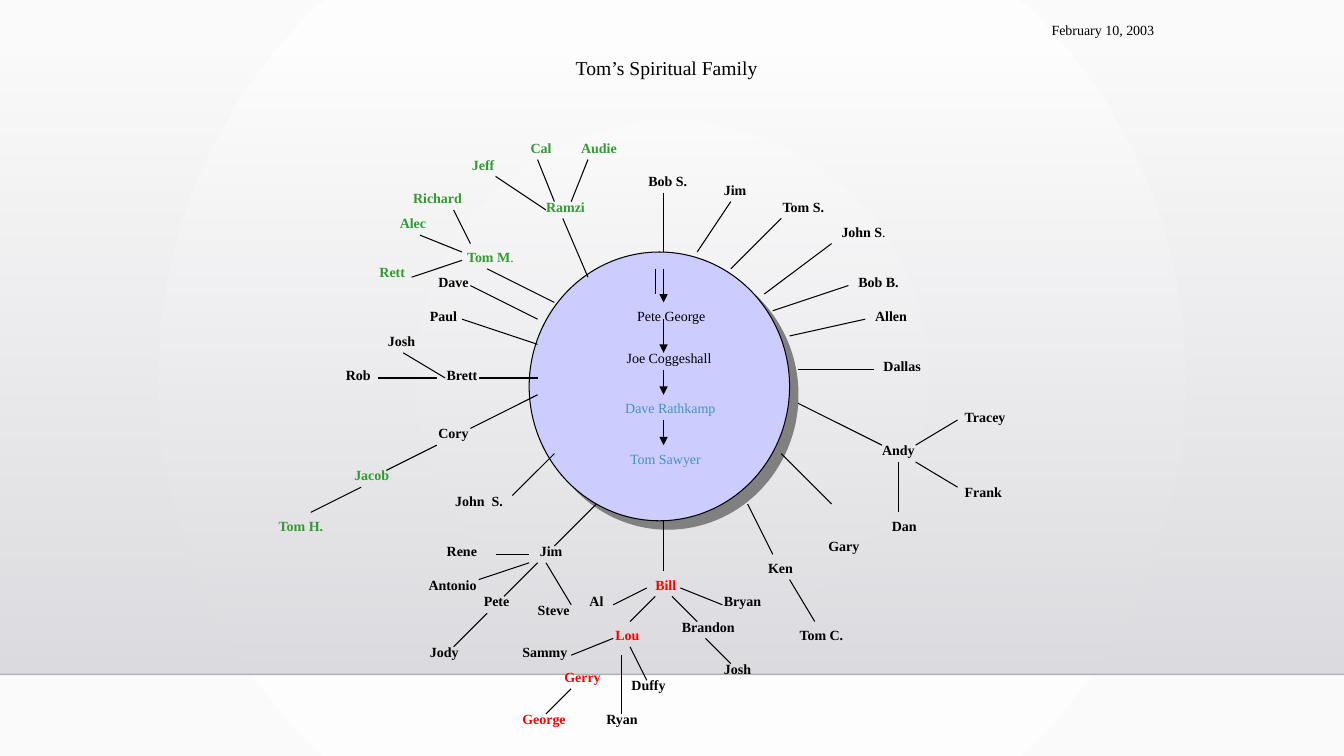
from lxml import etree
from pptx import Presentation
from pptx.dml.color import RGBColor
from pptx.enum import shapes, text
from pptx.oxml.ns import qn
from pptx.util import Pt

STEP = 6  # points per grid unit for the connecting lines
BLACK, GREEN, RED, BLUE = "000000", "339933", "FF0000", "4294B6"

# Ends of lines as x1, y1, x2, y2 in grid units
SPOKES = [
    (79, 30, 79, 23), (83, 30, 87, 24), (87, 32, 93, 26), (91, 35, 99, 29),
    (92, 37, 101, 34), (94, 40, 103, 38), (95, 44, 104, 44), (95, 48, 105, 53),
    (99, 60, 93, 54), (92, 66, 89, 60), (79, 68, 79, 62), (66, 65, 71, 60),
    (61, 59, 66, 54), (56, 51, 64, 47), (64, 45, 57, 45), (64, 41, 55, 38),
    (64, 38, 56, 34), (66, 36, 58, 32), (70, 33, 67, 26), (78, 32, 78, 35),
]
BRANCHES = [
    (68, 24, 70, 19), (66, 24, 64, 19), (65, 25, 59, 21), (56, 29, 54, 25),
    (55, 30, 50, 28), (49, 33, 55, 31), (53, 45, 48, 42), (52, 45, 45, 45),
    (46, 56, 52, 53), (37, 61, 43, 58), (59, 66, 63, 66), (57, 69, 63, 67),
    (60, 71, 64, 67), (68, 72, 65, 67), (54, 77, 58, 73), (73, 72, 77, 70),
    (75, 74, 78, 71), (83, 74, 80, 71), (86, 72, 81, 70), (87, 79, 84, 76),
    (68, 78, 73, 76), (65, 85, 68, 82), (74, 85, 74, 78), (77, 81, 75, 77),
    (94, 69, 97, 74), (109, 53, 114, 50), (109, 55, 114, 58), (107, 55, 107, 61),
]
ARROW_SPANS = [(32, 36), (38, 42), (44, 47), (50, 53)]

# Text, left, top and width in points
LINEAGE = [
    ("Pete George", 448, 216, BLACK), ("Joe Coggeshall", 440.5, 246, BLACK),
    ("Dave Rathkamp", 439.5, 282, BLUE), ("Tom Sawyer", 443, 318, BLUE),
]
FAMILY = {
    BLACK: [
        ("Bob S.", 456, 120, 48), ("Jim", 510, 126, 36), ("Tom S.", 552, 138, 48),
        ("John S.", 594, 156, 48), ("Bob B.", 606, 192, 48), ("Allen", 618, 216, 42),
        ("Dallas", 624, 252, 48), ("Andy", 623, 312, 48), ("Tracey", 682, 288, 60),
        ("Frank", 682, 342, 60), ("Dan", 630, 366, 42), ("Gary", 584.6, 380.2, 42),
        ("Ken", 541.5, 396, 48), ("Tom C.", 564, 444, 54), ("Bryan", 510, 420, 42),
        ("Brandon", 480, 438, 54), ("Josh", 510, 468, 60), ("Al", 414, 420, 30),
        ("Duffy", 444, 480, 42), ("Ryan", 426, 504, 42), ("Sammy", 366, 456, 48),
        ("Jim", 378.5, 384, 54), ("Rene", 312, 384, 48), ("Antonio", 299, 408, 54),
        ("Pete", 338.5, 420, 36), ("Steve", 377, 426, 42), ("Jody", 300, 456, 36),
        ("John  S.", 318, 348, 60), ("Cory", 306, 300, 42), ("Brett", 312, 258, 42),
        ("Josh", 270, 234, 36), ("Rob", 240, 258, 36), ("Paul", 300, 216, 36),
        ("Dave", 306, 192, 42),
    ],
    GREEN: [
        ("Tom M.", 326.5, 174, 60), ("Rett", 264, 185, 36), ("Alec", 278.5, 150, 36),
        ("Richard", 288, 132, 54), ("Ramzi", 383, 138, 60), ("Jeff", 330, 108, 36),
        ("Cal", 372, 96, 30), ("Audie", 408, 96, 42), ("Jacob", 246, 330, 42),
        ("Tom H.", 192, 366, 54),
    ],
    RED: [
        ("Bill", 461, 408, 36), ("Lou", 432.5, 444, 48), ("Gerry", 396, 474, 42),
        ("George", 366, 504, 54),
    ],
}
PLAIN_STOP = {("John S.", 594), ("Tom M.", 326.5)}  # final full stop is not bold


def rgb(value):
    return RGBColor.from_string(value)


def add_xml(parent, tag, **attributes):
    return etree.SubElement(parent, qn(tag), attributes)


class FamilySheet:
    font = "Times New Roman"

    def __init__(self, deck):
        self.page = deck.slides.add_slide(deck.slide_layouts[5])

    def gradient(self, fill, start, end):
        fill.gradient()
        for stop, value in zip(fill.gradient_stops, (start, end)):
            stop.color.rgb = rgb(value)

    def backdrop(self):
        fill = self.page.background.fill
        self.gradient(fill, "FFFFFF", "FAFAFA")
        grad = self.page.element.find(".//" + qn("a:gradFill"))
        grad.remove(grad.find(qn("a:lin")))
        circle = add_xml(grad, "a:path", path="circle")
        add_xml(circle, "a:fillToRect", l="50000", t="50000", r="50000", b="50000")

    def band(self, left, top, width, height):
        """Draw a rectangle that fades in from clear to grey."""
        box = self.shape("RECTANGLE", left, top, width, height)
        self.gradient(box.fill, "DCDCE0", "DEDEE2")
        box.fill.gradient_angle = 270
        box.line.fill.background()
        add_xml(box._element.find(".//" + qn("a:srgbClr")), "a:alpha", val="0")

    def shape(self, kind, left, top, width, height):
        box = self.page.shapes.add_shape(
            shapes.MSO_SHAPE[kind], Pt(left), Pt(top), Pt(width), Pt(height))
        box.shadow.inherit = False
        return box

    def hub(self, left, top, width, height):
        disc = self.shape("OVAL", left, top, width, height)
        disc.fill.solid()
        disc.fill.fore_color.rgb = rgb("CCCCFF")
        disc.line.color.rgb = rgb(BLACK)
        disc.line.width = Pt(0.75)
        effects = disc._element.spPr.find(qn("a:effectLst"))
        shadow = add_xml(effects, "a:outerShdw", dist=str(Pt(8.5)), dir="2700000",
                         algn="ctr", rotWithShape="0")
        add_xml(shadow, "a:srgbClr", val="808080")

    def line(self, x1, y1, x2, y2, color=BLACK, weight=0.75, arrow=False, alpha=None):
        link = self.page.shapes.add_connector(
            shapes.MSO_CONNECTOR.STRAIGHT, Pt(x1), Pt(y1), Pt(x2), Pt(y2))
        link.line.color.rgb = rgb(color)
        link.line.width = Pt(weight)
        if alpha:
            add_xml(link._element.find(".//" + qn("a:srgbClr")), "a:alpha", val=alpha)
        if arrow:
            add_xml(link._element.spPr.find(qn("a:ln")), "a:tailEnd", type="triangle")
        add_xml(link._element.spPr, "a:effectLst")

    def fill_text(self, box, parts, size, color):
        """Fill a box with one paragraph of (text, bold) parts."""
        frame = box.text_frame
        settings = {"word_wrap": True, "auto_size": text.MSO_AUTO_SIZE.NONE,
                    "vertical_anchor": text.MSO_ANCHOR.TOP}
        for key, value in settings.items():
            setattr(frame, key, value)
        para = frame.paragraphs[0]
        para.alignment = text.PP_ALIGN.LEFT
        for words, bold in parts:
            span = para.add_run()
            span.text = words
            for key, value in {"name": self.font, "size": Pt(size), "bold": bold}.items():
                setattr(span.font, key, value)
            span.font.color.rgb = rgb(color)

    def label(self, parts, left, top, width, color=BLACK):
        box = self.page.shapes.add_textbox(Pt(left), Pt(top), Pt(width), Pt(19.2))
        self.fill_text(box, parts, 10, color)

    def title(self, words, left, top, width, height):
        box = self.page.shapes.title
        place = {"left": left, "top": top, "width": width, "height": height}
        for key, value in place.items():
            setattr(box, key, Pt(value))
        self.fill_text(box, [(words, False)], 14, BLACK)
        self.page.shapes._spTree.append(box._element)


def main():
    deck = Presentation()
    deck.slide_width, deck.slide_height = Pt(960), Pt(540)
    sheet = FamilySheet(deck)
    sheet.backdrop()
    sheet.band(0, 36.7, 960, 445)
    sheet.line(0, 481.7, 960, 481.7, "000001", 1, alpha="20000")
    sheet.hub(378, 180, 186, 192)

    for ends in SPOKES + BRANCHES:
        sheet.line(*(STEP * value for value in ends))
    for start, end in ARROW_SPANS:
        sheet.line(79 * STEP, start * STEP, 79 * STEP, end * STEP, arrow=True)

    for name, left, top, color in LINEAGE:
        sheet.label([(name, False)], left, top, 84, color)
    for color, members in FAMILY.items():
        for name, left, top, width in members:
            parts = [(name, True)]
            if (name, left) in PLAIN_STOP:
                parts = [(name[:-1], True), (".", False)]
            sheet.label(parts, left, top, width, color)

    sheet.label([("February 10, 2003", False)], 744, 12, 126)
    sheet.title("Tom’s Spiritual Family", 404, 36, 232, 24)
    deck.save("out.pptx")


if __name__ == "__main__":
    main()
